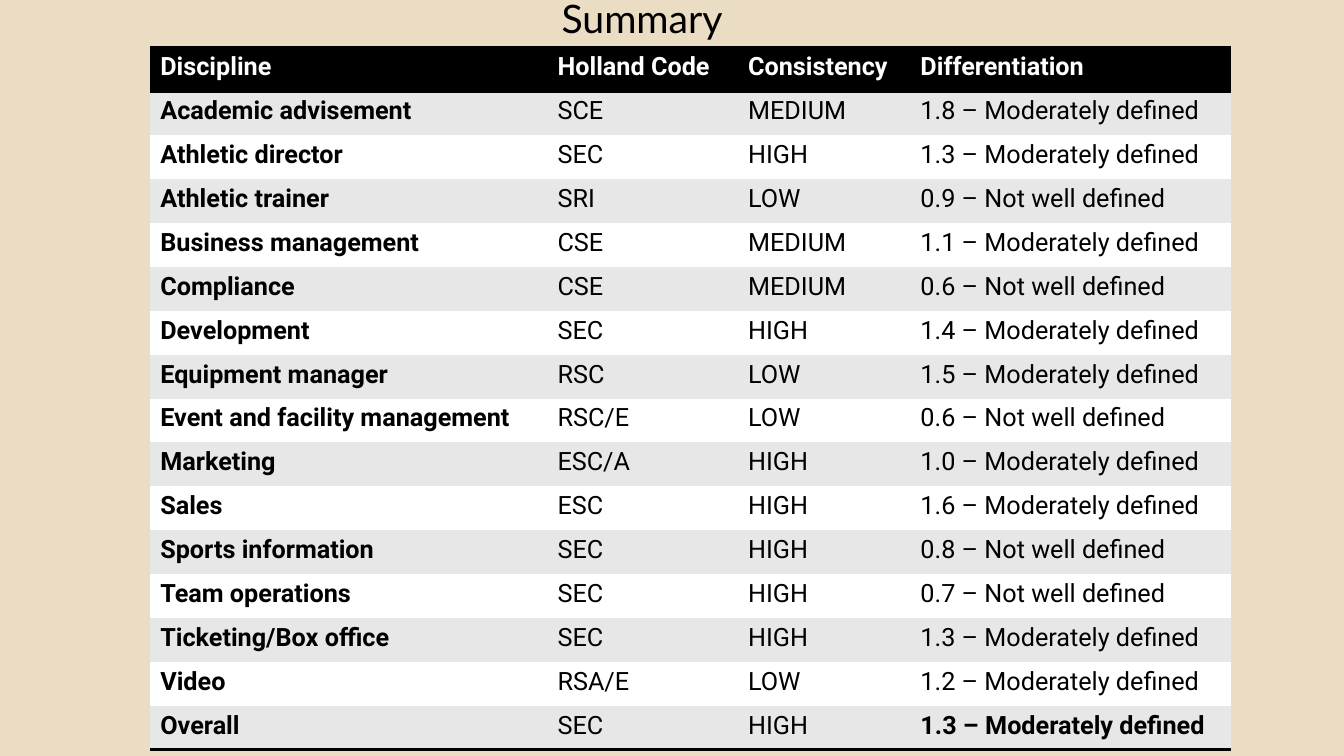
from pptx import Presentation
from pptx.dml.color import RGBColor
from pptx.enum.text import MSO_ANCHOR, MSO_AUTO_SIZE, PP_ALIGN
from pptx.oxml import parse_xml
from pptx.oxml.ns import nsdecls, qn
from pptx.util import Inches, Pt

COLORS = {"page": "EBDDC3", "ink": "000000", "paper": "FFFFFF", "band": "E7E7E7"}
NO_STYLE = "{2D5ABB26-0587-4C30-8999-92F81FD0307C}"
TITLE_BOX = (5.57, -0.25, 2.05, 0.72)
TABLE_BOX = (1.49, 0.47, 10.71, 6.97)
COLUMN_WIDTHS = (3.94, 1.89, 1.71, 3.18)
HEADINGS = ("Discipline", "Holland Code", "Consistency", "Differentiation")
DISCIPLINES = (
    ("Academic advisement", "SCE", "MEDIUM", "1.8 – Moderately defined"),
    ("Athletic director", "SEC", "HIGH", "1.3 – Moderately defined"),
    ("Athletic trainer", "SRI", "LOW", "0.9 – Not well defined"),
    ("Business management", "CSE", "MEDIUM", "1.1 – Moderately defined"),
    ("Compliance", "CSE", "MEDIUM", "0.6 – Not well defined"),
    ("Development", "SEC", "HIGH", "1.4 – Moderately defined"),
    ("Equipment manager", "RSC", "LOW", "1.5 – Moderately defined"),
    ("Event and facility management", "RSC/E", "LOW", "0.6 – Not well defined"),
    ("Marketing", "ESC/A", "HIGH", "1.0 – Moderately defined"),
    ("Sales", "ESC", "HIGH", "1.6 – Moderately defined"),
    ("Sports information", "SEC", "HIGH", "0.8 – Not well defined"),
    ("Team operations", "SEC", "HIGH", "0.7 – Not well defined"),
    ("Ticketing/Box office", "SEC", "HIGH", "1.3 – Moderately defined"),
    ("Video", "RSA/E", "LOW", "1.2 – Moderately defined"),
    ("Overall", "SEC", "HIGH", "1.3 – Moderately defined"),
)


def color(name):
    return RGBColor.from_string(COLORS[name])


def set_attributes(target, values):
    for name, value in values.items():
        setattr(target, name, value)


def write_text(frame, text, ink, **font_values):
    para = frame.paragraphs[0]
    span = para.add_run()
    span.text = text
    set_attributes(span.font, font_values)
    span.font.color.rgb = color(ink)
    return para


def add_border(cell, side):
    cell._tc.get_or_add_tcPr().append(parse_xml(
        f'<a:{side} {nsdecls("a")} w="{Pt(2)}"><a:solidFill>'
        f'<a:srgbClr val="{COLORS["ink"]}"/></a:solidFill></a:{side}>'
    ))


def place_title(page, box):
    title = page.shapes.title
    edges = ("left", "top", "width", "height")
    set_attributes(title, dict(zip(edges, map(Inches, box))))
    set_attributes(title.text_frame, {
        "margin_left": 0, "margin_right": 0,
        "margin_top": Inches(0.05), "margin_bottom": Inches(0.05),
        "vertical_anchor": MSO_ANCHOR.BOTTOM,
        "auto_size": MSO_AUTO_SIZE.NONE, "word_wrap": True,
    })
    para = write_text(title.text_frame, "Summary", "ink", name="Lato", size=Pt(28))
    set_attributes(para, {"alignment": PP_ALIGN.LEFT, "line_spacing": 0.9})


def place_table(page, box):
    rows = (HEADINGS, *DISCIPLINES)
    last = len(rows) - 1
    table = page.shapes.add_table(len(rows), len(HEADINGS), *map(Inches, box)).table
    set_attributes(table, {"first_row": False, "horz_banding": False})
    table._tbl.tblPr.find(qn("a:tableStyleId")).text = NO_STYLE
    for column, width in zip(table.columns, COLUMN_WIDTHS):
        column.width = Inches(width)
    for row_index, texts in enumerate(rows):
        is_header = row_index == 0
        fill = "ink" if is_header else ("paper", "band")[row_index % 2]
        sides = ("lnT", "lnB") if is_header else ("lnB",) if row_index == last else ()
        for column_index, text in enumerate(texts):
            cell = table.cell(row_index, column_index)
            for side in sides:
                add_border(cell, side)
            cell.fill.solid()
            cell.fill.fore_color.rgb = color(fill)
            is_total = row_index == last and column_index == len(texts) - 1
            write_text(cell.text_frame, text, "paper" if is_header else "ink",
                       name="Roboto", size=Pt(18),
                       bold=is_header or column_index == 0 or is_total)


def main():
    deck = Presentation()
    set_attributes(deck, {"slide_width": Inches(13.33), "slide_height": Inches(7.5)})
    page = deck.slides.add_slide(deck.slide_layouts.get_by_name("Title Only"))
    page.background.fill.solid()
    page.background.fill.fore_color.rgb = color("page")
    place_title(page, TITLE_BOX)
    place_table(page, TABLE_BOX)
    deck.save("out.pptx")


if __name__ == "__main__":
    main()
